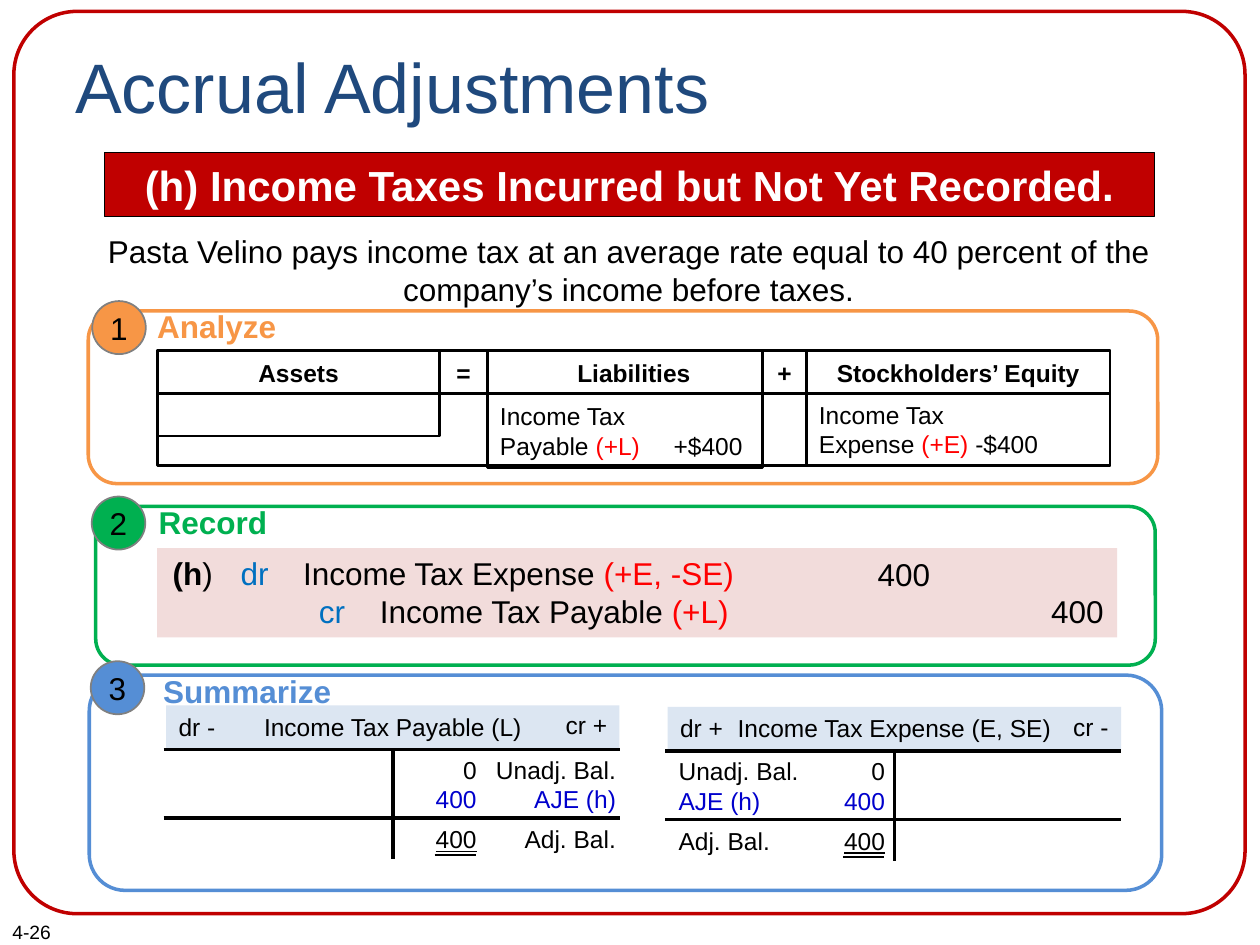
import pptx
import pptx.util
import pptx.dml.color
import pptx.enum.shapes
import pptx.enum.text
import lxml.etree
from pptx.util import Cm
from dataclasses import dataclass


@dataclass(frozen=True)
class Theme:
    font: str = "Arial"
    black: str = "000000"
    white: str = "FFFFFF"
    grey: str = "808080"
    navy: str = "1F497D"
    brick: str = "C00000"
    red: str = "FF0000"
    ink: str = "0000CC"
    azure: str = "0070C0"
    orange: str = "F79646"
    green: str = "00B050"
    blue: str = "558ED5"
    pink: str = "F2DCDB"
    pale: str = "DCE6F2"
    title: int = 40
    head: int = 24
    body: int = 18
    small: int = 14
    page: int = 11


T = Theme()
KIND = pptx.enum.shapes.MSO_SHAPE
ALIGN = pptx.enum.text.PP_ALIGN
LEFT, MID, RIGHT = ALIGN.LEFT, ALIGN.CENTER, ALIGN.RIGHT


def tint(name):
    return pptx.dml.color.RGBColor.from_string(name)


def write(shape, paras, size, align=LEFT, gaps=(), tabs=()):
    """Fill a shape with paragraphs, each a list of (text, colour, *styles)."""
    frame = shape.text_frame
    frame.word_wrap = True
    for i, runs in enumerate(paras):
        para = frame.paragraphs[0] if i == 0 else frame.add_paragraph()
        para.alignment = align
        if i < len(gaps):
            para.space_before = pptx.util.Pt(gaps[i])
        if i < len(tabs):
            props = para._p.get_or_add_pPr()
            stops = lxml.etree.SubElement(props, pptx.oxml.ns.qn("a:tabLst"))
            for stop in tabs[i]:
                lxml.etree.SubElement(stops, pptx.oxml.ns.qn("a:tab"),
                                      pos=str(Cm(stop)), algn="l")
        for text, hue, *style in runs:
            run = para.add_run()
            run.text = text
            font = run.font
            font.name, font.size = T.font, pptx.util.Pt(size)
            font.color.rgb = tint(hue)
            font.bold = "bold" in style
            font.underline = "under" in style


def label(slide, box, paras, size, align=LEFT, **more):
    area = slide.shapes.add_textbox(*map(Cm, box))
    write(area, paras, size, align, **more)


def block(slide, box, fill=None, line=None, width=1.5, kind=KIND.RECTANGLE):
    shape = slide.shapes.add_shape(kind, *map(Cm, box))
    shape.shadow.inherit = False
    if fill:
        shape.fill.solid()
        shape.fill.fore_color.rgb = tint(fill)
    else:
        shape.fill.background()
    if line:
        shape.line.color.rgb = tint(line)
        shape.line.width = pptx.util.Pt(width)
    else:
        shape.line.fill.background()
    return shape


def rule(slide, x, y, right, low, width=2):
    line = slide.shapes.add_connector(
        pptx.enum.shapes.MSO_CONNECTOR.STRAIGHT, *map(Cm, (x, y, right, low)))
    line.line.color.rgb = tint(T.black)
    line.line.width = pptx.util.Pt(width)
    lxml.etree.SubElement(line._element.spPr, pptx.oxml.ns.qn("a:effectLst"))
    return line


def header(slide, box):
    x, y, w, h = box
    frame = block(slide, box, line=T.brick, width=2, kind=KIND.ROUNDED_RECTANGLE)
    frame.adjustments[0] = 0.07
    label(slide, (0, y + h, 3.6, 0.74), [[("4-26", T.black)]], T.page)
    label(slide, (x + 0.99, y + 0.53, 22.86, 3.18),
          [[("Accrual Adjustments", T.navy)]], T.title)
    banner = block(slide, (x + 1.83, y + 2.84, 21.16, 1.3), T.brick, T.black, 0.75)
    write(banner, [[("(h) Income Taxes Incurred but Not Yet Recorded.",
                     T.white, "bold")]], T.head, MID)
    label(slide, (x + 0.43, y + 4.32, 23.93, 1.8),
          [[("Pasta Velino pays income tax at an average rate equal to 40 percent "
             "of the company’s income before taxes.", T.black)]], T.body, MID)


def card(slide, box, step, name, hue, disc, title):
    """Rounded frame with a numbered disc and a title at offsets from its corner."""
    x, y = box[:2]
    block(slide, box, line=hue, width=2, kind=KIND.ROUNDED_RECTANGLE)
    badge = block(slide, (x + disc[0], y + disc[1], 1.08, 1.07), hue, T.grey, 1, KIND.OVAL)
    frame = badge.text_frame
    frame.margin_left = frame.margin_right = 0
    write(badge, [[(step, T.black)]], T.body, MID)
    label(slide, (x + title[0], y + title[1], 4.35, 1.02), [[(name, hue, "bold")]], T.body)


def analyze(slide, box):
    x, y = box[:2]
    card(slide, box, "1", "Analyze", T.orange, (0.08, -0.2), (1.14, -0.2))
    edges = [x + e for e in (1.4, 7.08, 8.05, 13.59, 14.48, 20.6)]
    top, low = y + 0.8, y + 1.66
    heads = [("Liabilities", 0, 5), ("Assets", 0, 1), ("=", 1, 2),
             ("Stockholders’ Equity", 4, 5), ("+", 3, 4)]
    for text, a, b in heads:
        cell = block(slide, (edges[a], top, edges[b] - edges[a], 0.87), T.white, T.black)
        write(cell, [[(text, T.black, "bold")]], T.small, MID)
    owed = [[("Income Tax", T.black)],
            [("Payable ", T.black), ("(+L)", T.red), ("\t+$400", T.black)]]
    spent = [[("Income Tax", T.black)],
             [("Expense ", T.black), ("(+E) ", T.red), ("-$400", T.black)]]
    cells = [(0, 5, 1.45, []), (0, 1, 0.86, []), (2, 3, 1.5, owed), (4, 5, 1.45, spent)]
    for a, b, h, paras in cells:
        cell = block(slide, (edges[a], low, edges[b] - edges[a], h), line=T.black)
        write(cell, paras, T.small, tabs=[(), (3.5,)])


def record(slide, box):
    x, y = box[:2]
    card(slide, box, "2", "Record", T.green, (-0.08, -0.2), (1.02, -0.2))
    top = y + 0.84
    block(slide, (x + 1.24, top, 19.35, 1.8), T.pink)
    label(slide, (x + 1.3, top, 1.45, 1.8),
          [[("(h", T.black, "bold"), (")", T.black)]], T.body)
    entry = [[("dr", T.azure), ("\tIncome Tax Expense ", T.black), ("(+E, -SE)", T.red)],
             [("\tcr", T.azure), ("\tIncome Tax Payable ", T.black), ("(+L)", T.red)]]
    label(slide, (x + 2.67, top, 13.61, 1.8), entry, T.body,
          tabs=[(1.26,), (1.58, 2.81)])
    for dx, dy in ((14.05, 0.02), (17.55, 0.77)):
        label(slide, (x + dx, top + dy, 3.02, 1.03), [[("400", T.black)]], T.body, RIGHT)


def account(slide, box, name, signs, tags, vals, side):
    """T-account; tags and vals are offsets of the text columns, side aligns tags."""
    x, y, w, h = box
    bar = block(slide, box, T.pale)
    write(bar, [[(name, T.black)]], T.small, MID)
    label(slide, (x, y, 1.5, h), [[(signs[0], T.black)]], T.small)
    label(slide, (x + w - 1.5, y - 0.03, 1.5, h), [[(signs[1], T.black)]], T.small, RIGHT)
    for dy in (0.89, 2.27):
        rule(slide, x - 0.05, y + dy, x + w, y + dy)
    stem = rule(slide, x + w / 2, y + h, x + w / 2, y + 3.1)
    stem.begin_connect(bar, 2)
    columns = [(tags, 4.57, side, ("Unadj. Bal.", "AJE (h)", "Adj. Bal."), ()),
               (vals, 2.29, RIGHT, ("0", "400", "400"), ("under",))]
    for dx, wide, align, words, last in columns:
        first, change, total = words
        label(slide, (x + dx, y + 0.87, wide, 2.26),
              [[(first, T.black)], [(change, T.ink)], [(total, T.black, *last)]],
              T.small, align, gaps=(0, 0, 6))
    rule(slide, x + vals + 1.19, y + 3.02, x + vals + 2.03, y + 3.02, 1)


def summary(slide, box):
    x, y = box[:2]
    card(slide, box, "3", "Summarize", T.blue, (0.03, -0.28), (1.24, -0.18))
    account(slide, (x + 1.55, y + 0.61, 9.14, 0.86), "Income Tax Payable (L)",
            ("dr -", "cr +"), 4.75, 4.22, RIGHT)
    account(slide, (x + 11.66, y + 0.64, 9.14, 0.86), "Income Tax Expense (E, SE)",
            ("dr +", "cr -"), -0.03, 2.34, LEFT)


def main():
    deck = pptx.Presentation()
    deck.slide_width, deck.slide_height = Cm(25.4), Cm(19.05)
    slide = deck.slides.add_slide(deck.slide_layouts[6])
    header(slide, (0.28, 0.23, 24.82, 18.19))
    analyze(slide, (1.78, 6.27, 21.56, 3.48))
    record(slide, (1.93, 10.21, 21.36, 3.2))
    summary(slide, (1.8, 13.61, 21.62, 4.34))
    deck.save("out.pptx")


if __name__ == "__main__":
    main()
